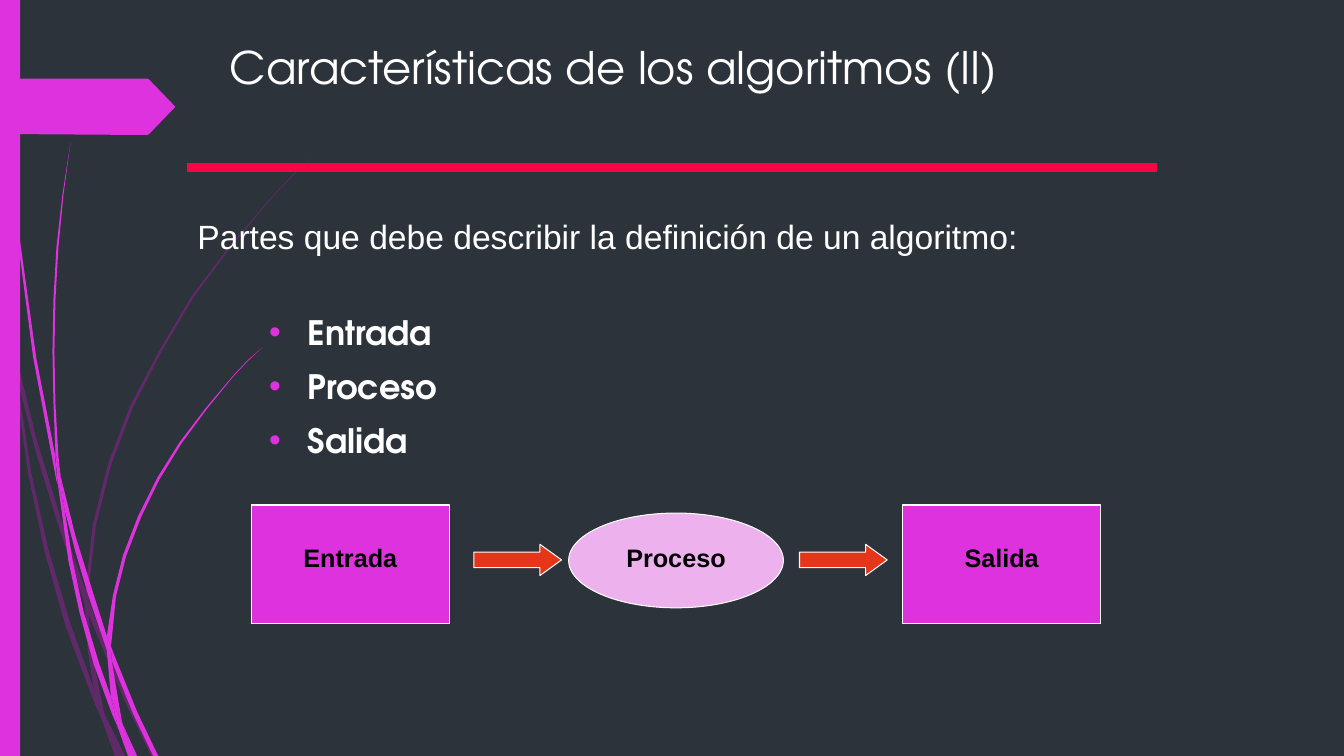
from lxml.etree import SubElement
from pptx import Presentation
from pptx.dml.color import RGBColor
from pptx.enum.shapes import MSO_SHAPE
from pptx.enum.text import MSO_ANCHOR, MSO_AUTO_SIZE, PP_ALIGN
from pptx.oxml.ns import qn
from pptx.util import Inches, Pt

BACKGROUND = RGBColor(0x2C, 0x33, 0x3A)
MAGENTA = RGBColor(0xDE, 0x32, 0xDE)
PURPLE = RGBColor(0xB0, 0x1C, 0xB0)
PINK = RGBColor(0xED, 0xB1, 0xED)
RED = RGBColor(0xF7, 0x05, 0x44)
ORANGE = RGBColor(0xE5, 0x36, 0x19)
WHITE = RGBColor(0xFF, 0xFF, 0xFF)
BLACK = RGBColor(0, 0, 0)
HEADING_FONT = "TeX Gyre Adventor"
TEXT_FONT = "Arial"

# Outlines of the blades of grass, as (x, y) corners in inches
BACK_BLADES = [
    [(0.11, 3.5), (0.09, 3.22), (0, 2.82), (0, 2.99), (0.1, 3.44)],
    [(0.58, 5.22), (0.84, 5.99), (0.85, 5.86), (0.62, 5.2), (0.36, 4.35),
     (0.14, 3.45), (0.17, 3.76), (0.36, 4.5)],
    [(0.92, 6.07), (0.88, 5.96), (0.88, 6.1), (1.23, 6.94), (1.5, 7.5),
     (1.55, 7.5), (1.27, 6.92)],
    [(1.19, 7.5), (1.24, 7.5), (1.05, 7.11)],
    [(0.93, 6.83), (0.7, 6.19), (0.48, 5.45), (0.31, 4.69), (0.17, 3.76),
     (0.11, 3.5), (0.28, 4.7), (0.44, 5.46), (0.65, 6.21), (0.92, 6.93),
     (1.01, 7.14), (0.99, 7.07)],
    [(0.84, 5.99), (0.87, 6.46), (0.93, 6.83), (0.96, 6.92), (1.05, 7.11),
     (1.03, 7.06), (0.91, 6.46), (0.88, 6.1), (0.88, 6.08)],
    [(0.88, 5.84), (0.95, 5.22), (1.1, 4.62), (1.32, 4.04), (1.6, 3.49),
     (1.92, 2.95), (2.29, 2.45), (2.68, 1.98), (2.9, 1.75), (3.12, 1.53),
     (2.89, 1.75), (2.68, 1.97), (2.28, 2.44), (1.9, 2.94), (1.58, 3.48),
     (1.29, 4.03), (1.07, 4.61), (0.92, 5.21), (0.85, 5.84), (0.85, 5.86),
     (0.88, 5.96)],
    [(1.01, 7.14), (1.14, 7.5), (1.19, 7.5)],
    [(0.88, 6.08), (0.88, 6.1), (0.88, 5.96), (0.85, 5.86), (0.84, 5.99)],
    [(0.96, 6.92), (0.93, 6.83), (0.99, 7.07), (1.01, 7.14), (1.19, 7.5),
     (1.05, 7.11)],
]
FRONT_BLADES = [
    [(0.07, 1.1), (0.17, 2.33), (0.33, 3.55), (0.56, 4.77), (0.57, 4.81),
     (0.55, 4.57), (0.55, 4.53), (0.36, 3.55), (0.19, 2.32), (0.08, 1.09),
     (0.05, 0.48), (0.04, 0), (0.03, 0), (0.04, 0.48)],
    [(0.88, 5.92), (1.06, 6.45), (1.06, 6.33), (1.06, 6.31), (0.93, 5.9),
     (0.75, 5.32), (0.6, 4.72), (0.64, 5.05), (0.75, 5.48)],
    [(1.13, 6.49), (1.1, 6.41), (1.11, 6.56), (1.32, 7.08), (1.52, 7.5),
     (1.57, 7.5), (1.36, 7.06)],
    [(1.1, 6.91), (0.98, 6.57), (0.83, 6.07), (0.72, 5.56), (0.64, 5.05),
     (0.57, 4.77), (0.68, 5.57), (0.79, 6.08), (0.93, 6.59), (1.11, 7.08),
     (1.17, 7.22), (1.16, 7.17)],
    [(0.6, 4.72), (0.58, 4.53), (0.55, 4.01), (0.54, 3.49), (0.55, 2.97),
     (0.58, 2.45), (0.63, 1.93), (0.7, 1.41), (0.62, 1.93), (0.56, 2.45),
     (0.53, 2.97), (0.52, 3.49), (0.53, 3.99), (0.55, 4.49)],
    [(1.33, 7.5), (1.36, 7.5), (1.22, 7.19)],
    [(0.57, 4.77), (0.64, 5.05), (0.6, 4.72), (0.55, 4.49), (0.55, 4.53)],
    [(1.11, 6.33), (1.15, 5.92), (1.25, 5.52), (1.4, 5.13), (1.58, 4.76),
     (1.8, 4.4), (2.05, 4.06), (2.31, 3.74), (2.45, 3.59), (2.61, 3.44),
     (2.45, 3.58), (2.31, 3.73), (2.04, 4.05), (1.78, 4.39), (1.56, 4.74),
     (1.37, 5.12), (1.22, 5.51), (1.12, 5.91), (1.06, 6.31), (1.1, 6.41)],
    [(1.17, 7.22), (1.27, 7.5), (1.31, 7.5)],
    [(1.06, 6.45), (1.1, 6.91), (1.16, 7.06), (1.22, 7.19), (1.21, 7.16),
     (1.11, 6.56), (1.09, 6.51)],
    [(1.06, 6.45), (1.09, 6.51), (1.11, 6.56), (1.1, 6.41), (1.06, 6.31),
     (1.06, 6.33)],
    [(1.16, 7.06), (1.1, 6.91), (1.16, 7.17), (1.17, 7.22), (1.3, 7.5),
     (1.33, 7.5), (1.22, 7.19)],
]
TAG = [(1.74, 1.06), (1.48, 1.33), (1.46, 1.34), (0, 1.33), (0, 0.78),
       (1.46, 0.78), (1.48, 0.79)]


def add_outline(slide, corners, color, opacity=100):
    points = [(Inches(x), Inches(y)) for x, y in corners]
    builder = slide.shapes.build_freeform(*points[0])
    builder.add_line_segments(points[1:], close=True)
    outline = builder.convert_to_shape()
    paint(outline, color)
    if opacity < 100:
        fill_color = outline.fill._xPr.find(qn("a:solidFill"))[0]
        SubElement(fill_color, qn("a:alpha"), val=str(opacity * 1000))


def paint(shape, fill, line=None):
    shape.shadow.inherit = False
    shape.fill.solid()
    shape.fill.fore_color.rgb = fill
    if line is None:
        shape.line.fill.background()
    else:
        shape.line.color.rgb = line
        shape.line.width = Pt(0.75)


def add_figure(slide, kind, at, fill, line=None, adjustments=()):
    figure = slide.shapes.add_shape(kind, *map(Inches, at))
    for index, value in enumerate(adjustments):
        figure.adjustments[index] = value
    paint(figure, fill, line)


def format_text(frame, font, size, color, bold=False, align=PP_ALIGN.LEFT):
    frame.word_wrap = True
    frame.auto_size = MSO_AUTO_SIZE.NONE
    frame.vertical_anchor = MSO_ANCHOR.TOP
    for para in frame.paragraphs:
        para.alignment = align
        for span in para.runs:
            span.font.name = font
            span.font.size = Pt(size)
            span.font.bold = bold
            span.font.color.rgb = color


def add_text(slide, text, at, size, color, **style):
    box = slide.shapes.add_textbox(*map(Inches, at))
    box.text_frame.text = text
    format_text(box.text_frame, TEXT_FONT, size, color, **style)


def fill_placeholder(holder, text, at, size, bold=False):
    holder.left, holder.top, holder.width, holder.height = map(Inches, at)
    holder.text_frame.text = text
    format_text(holder.text_frame, HEADING_FONT, size, WHITE, bold)


def add_bullet(para):
    para.space_before = Pt(10)
    props = para._p.get_or_add_pPr()
    props.set("marL", str(Inches(0.38)))
    props.set("indent", str(-Inches(0.38)))
    bullet_color = SubElement(props, qn("a:buClr"))
    SubElement(bullet_color, qn("a:srgbClr"), val=str(MAGENTA))
    SubElement(props, qn("a:buFont"), typeface=TEXT_FONT)
    SubElement(props, qn("a:buChar"), char="•")


def main():
    deck = Presentation()
    deck.slide_width, deck.slide_height = Inches(13.33), Inches(7.5)
    slide = deck.slides.add_slide(deck.slide_layouts[1])
    slide.background.fill.solid()
    slide.background.fill.fore_color.rgb = BACKGROUND

    # Side decoration
    for blade in BACK_BLADES:
        add_outline(slide, blade, PURPLE, opacity=40)
    for blade in FRONT_BLADES:
        add_outline(slide, blade, MAGENTA)
    add_figure(slide, MSO_SHAPE.RECTANGLE, (0, 0, 0.2, 7.5), MAGENTA)
    add_outline(slide, TAG, MAGENTA)

    # Title and rule
    title, body = slide.placeholders
    fill_placeholder(title, "Características de los algoritmos (II)",
                     (2.18, 0.28, 9.06, 1.18), 32)
    title.text_frame.margin_top = Inches(0.11)
    add_figure(slide, MSO_SHAPE.RECTANGLE, (1.86, 1.62, 9.61, 0.08), RED, RED)

    # Introduction and list
    add_text(slide, "Partes que debe describir la definición de un algoritmo:",
             (1.86, 2.09, 9.61, 0.5), 24, WHITE)
    fill_placeholder(body, "Entrada\nProceso\nSalida",
                     (2.57, 3.04, 5.12, 1.57), 24, bold=True)
    for para in body.text_frame.paragraphs:
        add_bullet(para)

    # Flow diagram
    for left in (2.49, 8.95):
        add_figure(slide, MSO_SHAPE.RECTANGLE, (left, 5.01, 1.97, 1.18),
                   MAGENTA, WHITE)
    add_figure(slide, MSO_SHAPE.OVAL, (5.64, 5.09, 2.13, 0.94), PINK, WHITE)
    for left in (4.7, 7.93):
        add_figure(slide, MSO_SHAPE.RIGHT_ARROW, (left, 5.4, 0.87, 0.31),
                   ORANGE, WHITE, adjustments=[0.5, 0.69])
    for label, left in (("Entrada", 2.49), ("Proceso", 5.72), ("Salida", 8.95)):
        add_text(slide, label, (left, 5.33, 1.97, 0.4), 18, BLACK,
                 bold=True, align=PP_ALIGN.CENTER)

    deck.save("out.pptx")


if __name__ == "__main__":
    main()
